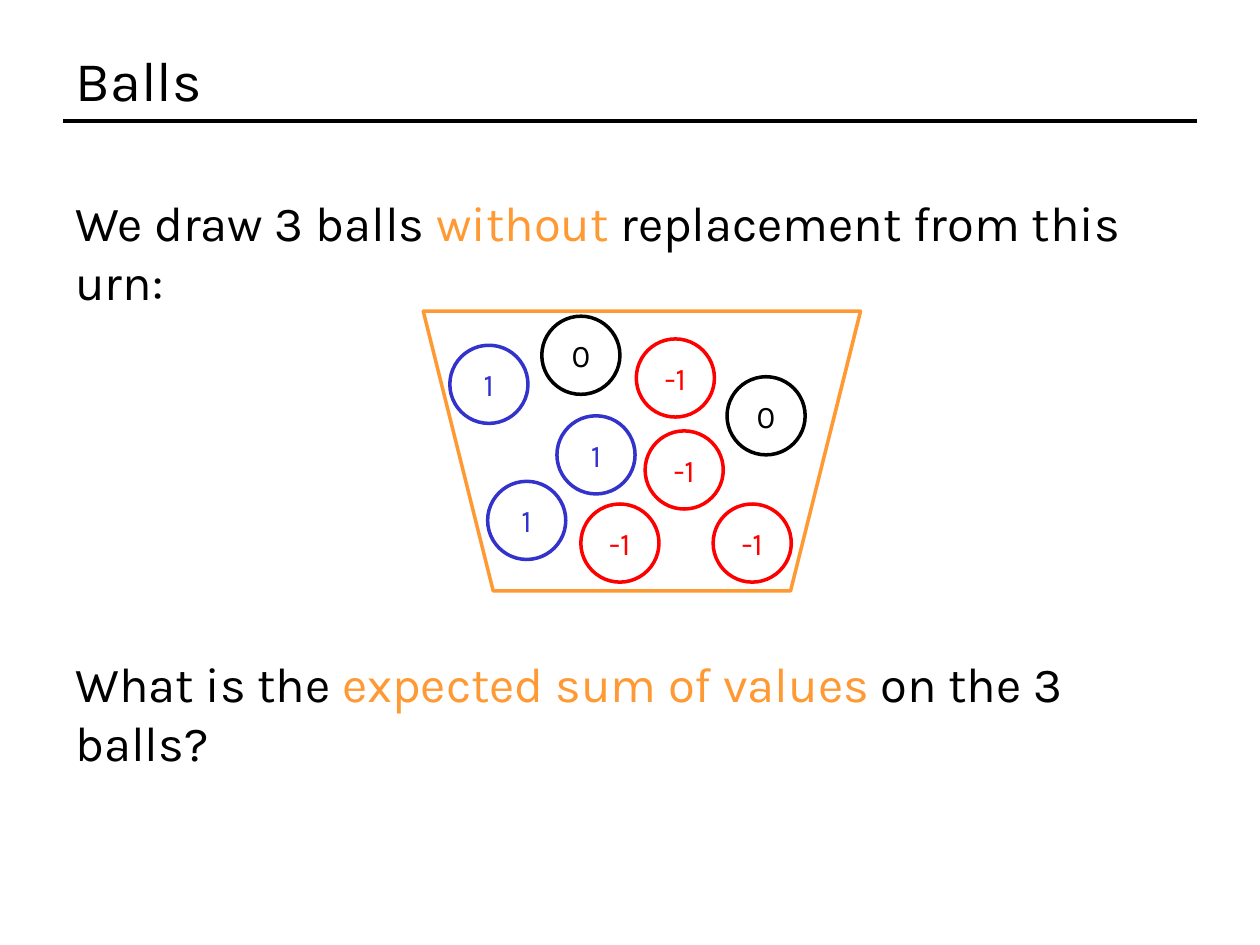
import pptx
import pptx.util
import pptx.dml.color
import pptx.enum.shapes
import pptx.enum.text
import pptx.oxml.ns
import lxml.etree

Inches = pptx.util.Inches
Pt = pptx.util.Pt
Kind = pptx.enum.shapes.MSO_SHAPE
Align = pptx.enum.text.PP_ALIGN
Anchor = pptx.enum.text.MSO_ANCHOR
BLACK, ORANGE, RED, BLUE = "000000", "FF9933", "FF0000", "3333CC"


def paint(item, color):
    item.color.rgb = pptx.dml.color.RGBColor.from_string(color)


def style(run, size, color):
    run.font.name = "Karla"
    run.font.size = Pt(size)
    paint(run.font, color)


deck = pptx.Presentation()
deck.slide_width = Inches(10)
deck.slide_height = Inches(7.5)
slide = deck.slides.add_slide(deck.slide_layouts[5])
shapes = slide.shapes

title = shapes.title
title.left, title.top = Inches(0.5), Inches(0.3)
title.width, title.height = Inches(9), Inches(0.66)
title.text_frame.text = "Balls"
title.text_frame.vertical_anchor = Anchor.MIDDLE
head = title.text_frame.paragraphs[0]
head.alignment = Align.LEFT
style(head.runs[0], 32, BLACK)

rule = shapes.add_connector(
    pptx.enum.shapes.MSO_CONNECTOR.STRAIGHT,
    Inches(0.5), Inches(0.96), Inches(9.5), Inches(0.96))
paint(rule.line, BLACK)
rule.line.width = Pt(2)
lxml.etree.SubElement(rule._element.spPr, pptx.oxml.ns.qn("a:effectLst"))

lines = [
    (1.48, "We draw 3 balls ", "without", " replacement from this urn:"),
    (5.14, "What is the ", "expected sum of values", " on the 3 balls?"),
]
for top, *parts in lines:
    box = shapes.add_textbox(Inches(0.5), Inches(top), Inches(9), Inches(0.57))
    box.text_frame.word_wrap = True
    for part, color in zip(parts, (BLACK, ORANGE, BLACK)):
        run = box.text_frame.paragraphs[0].add_run()
        run.text = part
        style(run, 28, color)

urn = shapes.add_shape(
    Kind.TRAPEZOID, Inches(3.36), Inches(2.47), Inches(3.47), Inches(2.22))
urn._element.spPr.find(pptx.oxml.ns.qn("a:xfrm")).set("flipV", "1")
urn.shadow.inherit = False
urn.fill.background()
paint(urn.line, ORANGE)
urn.line.width = Pt(2)

hues = {"-1": RED, "0": BLACK, "1": BLUE}
balls = [
    ("-1", 4.61, 4), ("1", 3.57, 2.74), ("1", 3.87, 3.82),
    ("1", 4.42, 3.3), ("-1", 5.05, 2.69), ("-1", 5.66, 4),
    ("0", 5.77, 2.99), ("0", 4.3, 2.51), ("-1", 5.12, 3.42),
]
for value, left, top in balls:
    ball = shapes.add_shape(
        Kind.OVAL, Inches(left), Inches(top), Inches(0.62), Inches(0.62))
    ball.shadow.inherit = False
    ball.fill.background()
    paint(ball.line, hues[value])
    ball.line.width = Pt(2)
    frame = ball.text_frame
    frame.text = value
    frame.word_wrap = False
    frame.vertical_anchor = Anchor.MIDDLE
    frame.paragraphs[0].alignment = Align.CENTER
    style(frame.paragraphs[0].runs[0], 18, hues[value])

deck.save("out.pptx")
